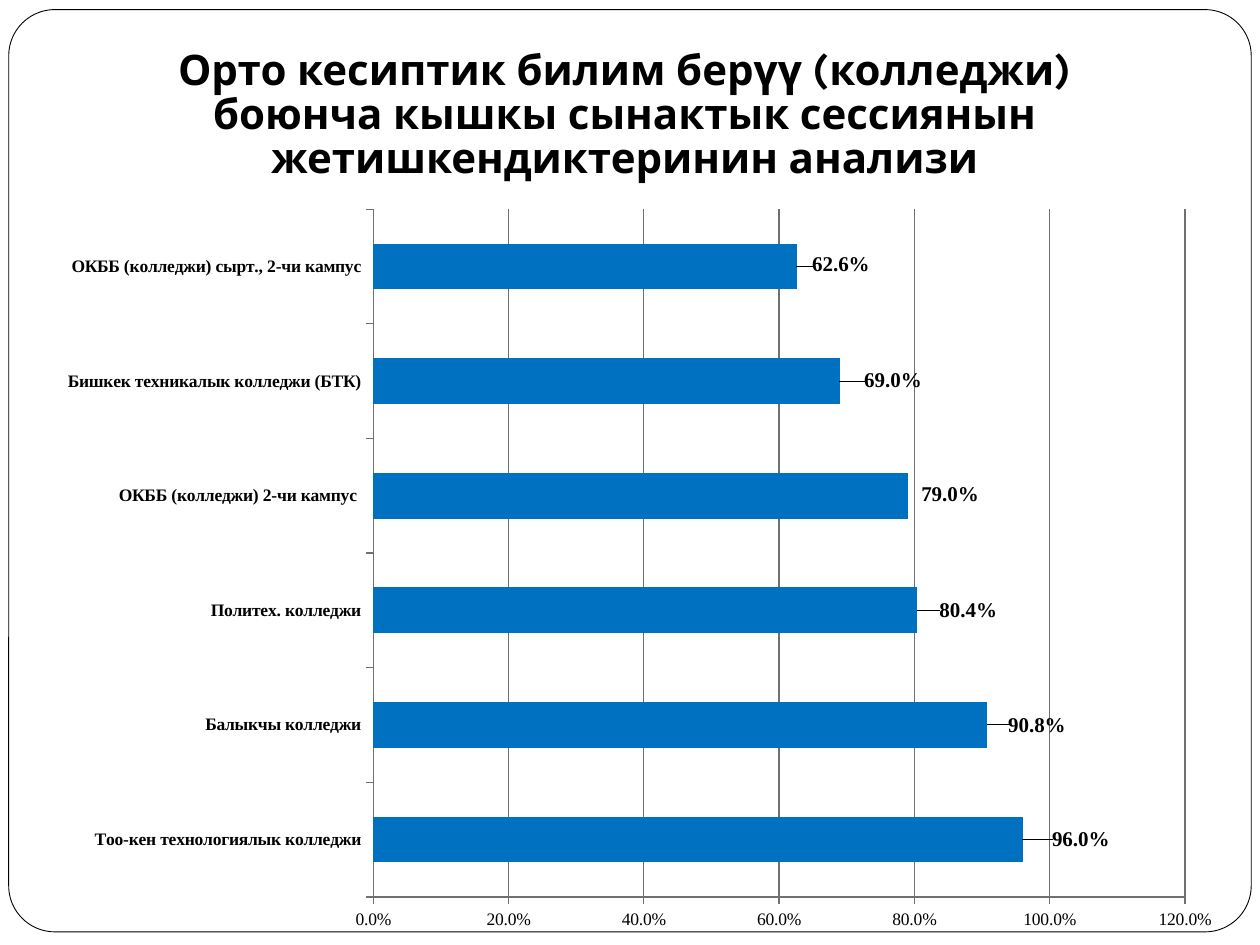
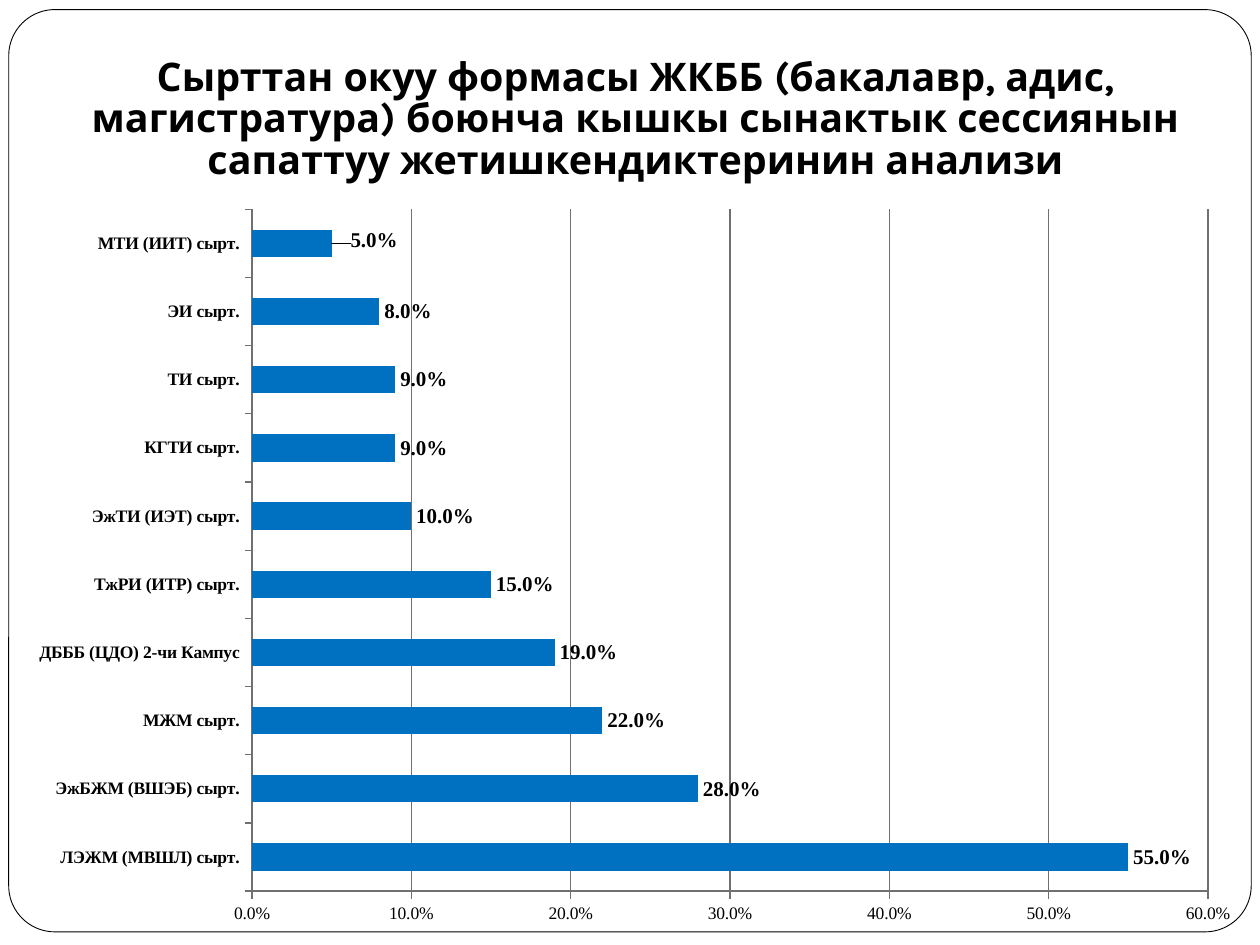
from lxml import etree
from pptx import Presentation
from pptx.chart import data as cd
from pptx.dml import color as dc
from pptx.enum import chart as ch, shapes, text
from pptx.oxml import ns
from pptx.util import Pt


def rgb(value):
    return dc.RGBColor.from_string(value)


class Deck:
    TITLE_FONT, CHART_FONT = "Karla", "Times New Roman"
    INK, PAPER, BAR, GRID = "000000", "FFFFFF", "0070C0", "707070"

    def __init__(self):
        self.prs = Presentation()
        self.prs.slide_width, self.prs.slide_height = Pt(720), Pt(540)

    def add_slide(self):
        self.s = self.prs.slides.add_slide(self.prs.slide_layouts[5])
        self.frame()

    def frame(self):
        sp = self.s.shapes.add_shape(shapes.MSO_SHAPE.ROUNDED_RECTANGLE,
                                     Pt(5), Pt(5.5), Pt(710), Pt(527))
        sp.adjustments[0] = 0.05
        sp.shadow.inherit = False
        sp.fill.solid()
        sp.fill.fore_color.rgb = rgb(self.PAPER)
        sp.line.color.rgb = rgb(self.INK)
        sp.line.width = Pt(0.5)
        # Send the frame behind the title
        self.s.shapes._spTree.insert(2, sp._element)

    def title(self, lines, box, size):
        sp = self.s.shapes.title
        sp.left, sp.top, sp.width, sp.height = map(Pt, box)
        tf = sp.text_frame
        tf.word_wrap = True
        tf.auto_size = text.MSO_AUTO_SIZE.NONE
        tf.vertical_anchor = text.MSO_ANCHOR.BOTTOM
        tf.margin_left = tf.margin_right = tf.margin_bottom = Pt(7.2)
        tf.margin_top = Pt(3.6)
        p = tf.paragraphs[0]
        p.alignment = text.PP_ALIGN.CENTER
        p.line_spacing = 0.88
        for i, line in enumerate(lines):
            if i:
                p.add_line_break()
            r = p.add_run()
            r.text = line
            self.font(r.font, self.TITLE_FONT, size, True)

    def font(self, font, name, size, bold):
        font.name, font.size, font.bold = name, Pt(size), bold
        font.color.rgb = rgb(self.INK)

    def bar_chart(self, rows, box, plot_box, top_value, step, shifts):
        data = cd.CategoryChartData(number_format="0.0%")
        data.categories = [name for name, _ in rows]
        data.add_series("Series 1", [value for _, value in rows])
        chart = self.s.shapes.add_chart(
            ch.XL_CHART_TYPE.BAR_CLUSTERED, *map(Pt, box), data).chart
        chart.has_legend = chart.has_title = False
        self.font(chart.font, self.CHART_FONT, 10, False)
        self.place_plot(chart, box, plot_box)

        # Axes
        for axis in (chart.category_axis, chart.value_axis):
            axis.major_tick_mark = ch.XL_TICK_MARK.OUTSIDE
            axis.minor_tick_mark = ch.XL_TICK_MARK.NONE
            axis.format.line.color.rgb = rgb(self.GRID)
            axis.format.line.width = Pt(0.75)
        self.font(chart.category_axis.tick_labels.font, self.CHART_FONT, 10, True)
        axis = chart.value_axis
        axis.minimum_scale, axis.maximum_scale, axis.major_unit = 0, top_value, step
        axis.has_major_gridlines = True
        axis.major_gridlines.format.line.color.rgb = rgb(self.GRID)
        axis.major_gridlines.format.line.width = Pt(0.75)
        axis.tick_labels.number_format = "0.0%"
        axis.tick_labels.number_format_is_linked = False

        # Bars and their values
        plot = chart.plots[0]
        plot.gap_width, plot.vary_by_categories = 150, False
        series = plot.series[0]
        series.format.fill.solid()
        series.format.fill.fore_color.rgb = rgb(self.BAR)
        labels = series.data_labels
        labels.show_value = True
        labels.number_format, labels.number_format_is_linked = "0.0%", False
        labels.position = ch.XL_LABEL_POSITION.OUTSIDE_END
        self.font(labels.font, self.CHART_FONT, 12, True)
        for i, (dx, dy) in shifts.items():
            label = series.points[i].data_label
            label.position = ch.XL_LABEL_POSITION.OUTSIDE_END
            self.font(label.font, self.CHART_FONT, 12, True)
            node = series._element.xpath(f"c:dLbls/c:dLbl[c:idx/@val='{i}']")[0]
            node.insert(1, self.layout(x=dx / box[2], y=dy / box[3]))

    def place_plot(self, chart, box, plot_box):
        area = chart._chartSpace.chart.plotArea
        for old in area.findall(ns.qn("c:layout")):
            area.remove(old)
        x, y, w, h = plot_box
        area.insert(0, self.layout(
            layoutTarget="inner", xMode="edge", yMode="edge",
            x=(x - box[0]) / box[2], y=(y - box[1]) / box[3],
            w=w / box[2], h=h / box[3]))

    def layout(self, **settings):
        node = etree.Element(ns.qn("c:layout"))
        manual = etree.SubElement(node, ns.qn("c:manualLayout"))
        for tag, value in settings.items():
            etree.SubElement(manual, ns.qn(f"c:{tag}")).set("val", str(value))
        return node


def main():
    deck = Deck()

    # Colleges: pass rate
    deck.add_slide()
    deck.title(["Орто кесиптик билим берүү (колледжи)",
                "боюнча кышкы сынактык сессиянын жетишкендиктеринин анализи"],
               (-3, 21.6, 720, 90), 24)
    colleges = [
        ("Тоо-кен технологиялык колледжи", 0.96),
        ("Балыкчы колледжи", 0.908),
        ("Политех. колледжи", 0.804),
        ("ОКББ (колледжи) 2-чи кампус ", 0.79),
        ("Бишкек техникалык колледжи (БТК)", 0.69),
        ("ОКББ (колледжи) сырт., 2-чи кампус", 0.626),
    ]
    deck.bar_chart(colleges, (25, 111.6, 680.4, 428.4), (213.4, 119.6, 463.8, 393),
                   1.2, 0.2, {0: (14, 0), 1: (9, 0), 2: (10, 0),
                              3: (5, -1), 4: (11, -0.5), 5: (6, -1.5)})

    # Distance learning: quality rate
    deck.add_slide()
    deck.title(["Сырттан окуу формасы ЖКББ (бакалавр, адис, магистратура) боюнча "
                "кышкы сынактык сессиянын сапаттуу жетишкендиктеринин анализи"],
               (14.4, 21, 697.7, 90.6), 22.5)
    institutes = [
        ("ЛЭЖМ (МВШЛ) сырт.", 0.55),
        ("ЭжБЖМ (ВШЭБ) сырт.", 0.28),
        ("МЖМ сырт.", 0.22),
        ("ДБББ (ЦДО) 2-чи Кампус", 0.19),
        ("ТжРИ (ИТР) сырт.", 0.15),
        ("ЭжТИ (ИЭТ) сырт.", 0.1),
        ("КГТИ сырт.", 0.09),
        ("ТИ сырт.", 0.09),
        ("ЭИ сырт.", 0.08),
        ("МТИ (ИИТ) сырт.", 0.05),
    ]
    deck.bar_chart(institutes, (8.6, 111.6, 708.5, 425.5), (144, 119.6, 546.3, 389.7),
                   0.6, 0.1, {9: (8, -2)})

    deck.prs.save("out.pptx")


if __name__ == "__main__":
    main()
